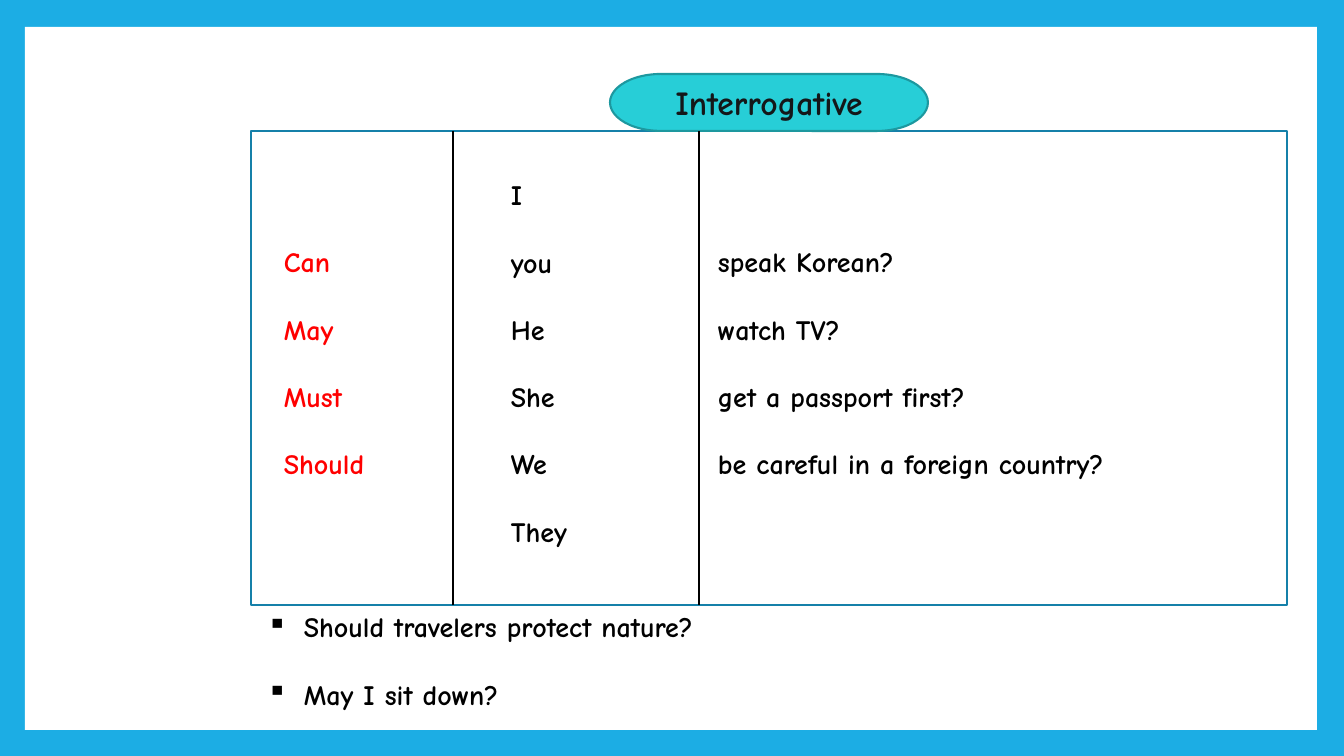
"""Builds a slide on interrogative sentences with modal verbs."""
from lxml import etree
from pptx import Presentation
from pptx.dml.color import RGBColor
from pptx.enum.shapes import MSO_CONNECTOR, MSO_SHAPE
from pptx.enum.text import MSO_ANCHOR, PP_ALIGN
from pptx.oxml.ns import qn
from pptx.util import Emu, Pt

RECTANGLE = MSO_SHAPE.RECTANGLE
TERMINATOR = MSO_SHAPE.FLOWCHART_TERMINATOR
STRAIGHT = MSO_CONNECTOR.STRAIGHT
MIDDLE = MSO_ANCHOR.MIDDLE
CENTER = PP_ALIGN.CENTER

FONT = "Comic Neue"
COLORS = {
    "border": "1CADE4",
    "page": "FFFFFF",
    "frame": "1580A9",
    "pill": "27CED7",
    "pill_edge": "1D989F",
    "title": "141719",
    "text": "000000",
    "modal": "FF0000",
}
ROW_PITCH = 67
FIRST_ROW = 173
INSET = 10
BULLET_INDENT = 37


def px(length):
    return Emu(round(length * 914400 / 100.8))


def write(frame, lines, color, size=20):
    frame.word_wrap = True
    frame.text = "\n".join(lines)
    for paragraph in frame.paragraphs:
        paragraph.space_before = Pt(0)
        paragraph.space_after = Pt(24 if len(lines) > 1 else 0)
        font = paragraph.runs[0].font
        font.name, font.size, font.bold = FONT, Pt(size), True
        font.color.rgb = RGBColor.from_string(COLORS[color])


prs = Presentation()
prs.slide_width, prs.slide_height = px(1344), px(756)
slide = prs.slides.add_slide(prs.slide_layouts[5])
slide.background.fill.solid()
slide.background.fill.fore_color.rgb = RGBColor.from_string(COLORS["border"])
shapes = slide.shapes

panels = [
    (RECTANGLE, (25, 27, 1292, 703), "page", None),
    (RECTANGLE, (251, 131, 1036, 474), None, "frame"),
    (TERMINATOR, (610, 74, 318, 57), "pill", "pill_edge"),
]
for kind, box, fill, edge in panels:
    panel = shapes.add_shape(kind, *map(px, box))
    panel.shadow.inherit = False
    if fill:
        panel.fill.solid()
        panel.fill.fore_color.rgb = RGBColor.from_string(COLORS[fill])
    else:
        panel.fill.background()
    if edge:
        panel.line.color.rgb = RGBColor.from_string(COLORS[edge])
        panel.line.width = Pt(1.5)
    else:
        panel.line.fill.background()

for x in (453, 699):
    divider = shapes.add_connector(STRAIGHT, px(x), px(131), px(x), px(605))
    divider.line.color.rgb = RGBColor.from_string(COLORS["text"])
    divider.line.width = Pt(1.5)
    etree.SubElement(divider._element.spPr, qn("a:effectLst"))

title = shapes.title
title.left, title.top, title.width, title.height = map(px, (610, 74, 318, 57))
write(title.text_frame, ["Interrogative"], "title", 24)
title.text_frame.vertical_anchor = MIDDLE
title.text_frame.paragraphs[0].alignment = CENTER
shapes._spTree.append(title._element)

columns = [
    (284, 160, 1, "modal", ["Can", "May", "Must", "Should"]),
    (511, 180, 0, "text", ["I", "you", "He", "She", "We", "They"]),
    (718, 560, 1, "text", ["speak Korean?", "watch TV?", "get a passport first?",
                           "be careful in a foreign country?"]),
]
for x, width, start_row, color, words in columns:
    column = shapes.add_textbox(px(x - INSET), px(FIRST_ROW + start_row * ROW_PITCH),
                                px(width), px(len(words) * ROW_PITCH))
    write(column.text_frame, words, color)

examples = shapes.add_textbox(px(257), px(605), px(671), px(112))
write(examples.text_frame, ["Should travelers protect nature?", "May I sit down?"], "text")
for paragraph in examples.text_frame.paragraphs:
    properties = paragraph._p.get_or_add_pPr()
    properties.set("marL", str(px(BULLET_INDENT)))
    properties.set("indent", str(-px(BULLET_INDENT)))
    etree.SubElement(properties, qn("a:buChar")).set("char", "▪")

prs.save("out.pptx")
